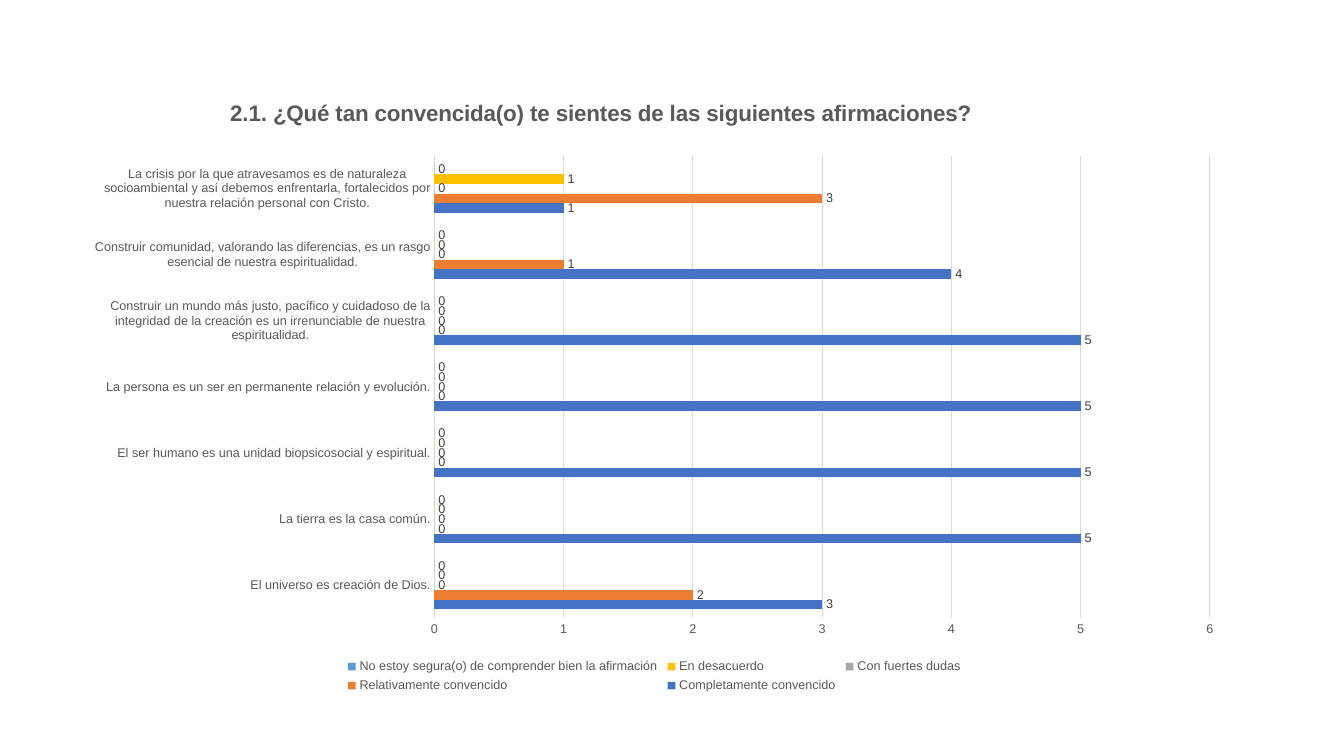
from pptx import Presentation
from pptx.chart.data import CategoryChartData as ChartData
from pptx.dml.color import RGBColor as Color
from pptx.enum.chart import XL_CHART_TYPE as ChartType
from pptx.enum.chart import XL_LABEL_POSITION as LabelPosition
from pptx.enum.chart import XL_LEGEND_POSITION as LegendPosition
from pptx.enum.chart import XL_TICK_MARK as TickMark
from pptx.oxml import parse_xml
from pptx.oxml.ns import nsdecls, qn
from pptx.util import Inches, Pt

THEME = {
    "font": "Arial",
    "title_size": 16, "small_size": 9,
    "text": "595959", "value": "404040", "line": "D9D9D9",
}

STATEMENTS = [
    "El universo es creación de Dios.",
    "La tierra es la casa común.",
    "El ser humano es una unidad biopsicosocial y espiritual.",
    "La persona es un ser en permanente relación y evolución.",
    "Construir un mundo más justo, pacífico y cuidadoso de la integridad "
    "de la creación es un irrenunciable de nuestra espiritualidad.",
    "Construir comunidad, valorando las diferencias, es un rasgo esencial "
    "de nuestra espiritualidad.",
    "La crisis por la que atravesamos es de naturaleza socioambiental y así "
    "debemos enfrentarla, fortalecidos por nuestra relación personal con Cristo.",
]

# Answer, votes per statement, bar colour
ANSWERS = [
    ("Completamente convencido", [3, 5, 5, 5, 5, 4, 1], "4472C4"),
    ("Relativamente convencido", [2, 0, 0, 0, 0, 1, 3], "ED7D31"),
    ("Con fuertes dudas", [0] * 7, "A5A5A5"),
    ("En desacuerdo", [0, 0, 0, 0, 0, 0, 1], "FFC000"),
    ("No estoy segura(o) de comprender bien la afirmación", [0] * 7, "5B9BD5"),
]


def format_text(target, text=None, size=THEME["small_size"],
                color=THEME["text"], bold=False):
    """Format a chart part's font, or write text into a text frame."""
    if text is None:
        font = target.font
    else:
        span = target.paragraphs[0].add_run()
        span.text = text
        font = span.font
    font.name, font.size, font.bold = THEME["font"], Pt(size), bold
    font.color.rgb = Color.from_string(color)


def place(element, index, **shares):
    """Give a chart part a fixed place, in shares of the chart's size."""
    for old in element.findall(qn("c:layout")):
        element.remove(old)
    target = '<c:layoutTarget val="inner"/>' if index == 0 else ""
    modes = "".join(f'<c:{key}Mode val="edge"/>' for key in "xy")
    values = "".join(f'<c:{key} val="{share}"/>' for key, share in shares.items())
    element.insert(index, parse_xml(
        f'<c:layout {nsdecls("c")}><c:manualLayout>{target}{modes}{values}'
        "</c:manualLayout></c:layout>"))


# Slide
deck = Presentation()
deck.slide_width, deck.slide_height = Inches(13.33), Inches(7.5)
page = deck.slides.add_slide(deck.slide_layouts[6])

# Chart
survey = ChartData(number_format="0")
survey.categories = STATEMENTS
for answer, votes, _ in ANSWERS:
    survey.add_series(answer, votes)
chart = page.shapes.add_chart(
    ChartType.BAR_CLUSTERED, Inches(0.75), Inches(0.88),
    Inches(11.48), Inches(6.04), survey).chart
format_text(chart)
place(chart.plots[0]._element.getparent(), 0, x=0.31, y=0.11, w=0.67, h=0.76)

# Title
chart.has_title = True
format_text(chart.chart_title.text_frame,
            "2.1. ¿Qué tan convencida(o) te sientes de las siguientes afirmaciones?",
            size=THEME["title_size"], bold=True)
place(chart.chart_title._element, 1, x=0.13, y=0.01)

# Bars and their values
plot = chart.plots[0]
plot.gap_width, plot.overlap, plot.vary_by_categories = 182, 0, False
for series, (_, _, color) in zip(plot.series, ANSWERS):
    series.format.fill.solid()
    series.format.fill.fore_color.rgb = Color.from_string(color)
    labels = series.data_labels
    labels.show_value = True
    labels.position = LabelPosition.OUTSIDE_END
    format_text(labels, color=THEME["value"])

# Axes
statement_axis, vote_axis = chart.category_axis, chart.value_axis
for axis in (statement_axis, vote_axis):
    axis.major_tick_mark = axis.minor_tick_mark = TickMark.NONE
    format_text(axis.tick_labels)
statement_axis.has_major_gridlines = False
vote_axis.has_major_gridlines = True
vote_axis.minimum_scale, vote_axis.maximum_scale, vote_axis.major_unit = 0, 6, 1
vote_axis.format.line.fill.background()
for part in (statement_axis, vote_axis.major_gridlines):
    part.format.line.width = Pt(0.75)
    part.format.line.color.rgb = Color.from_string(THEME["line"])

# Legend
chart.has_legend = True
chart.legend.position = LegendPosition.BOTTOM
chart.legend.include_in_layout = False
format_text(chart.legend)
place(chart.legend._element, 1, x=0.23, y=0.93, w=0.54, h=0.07)

deck.save("out.pptx")
